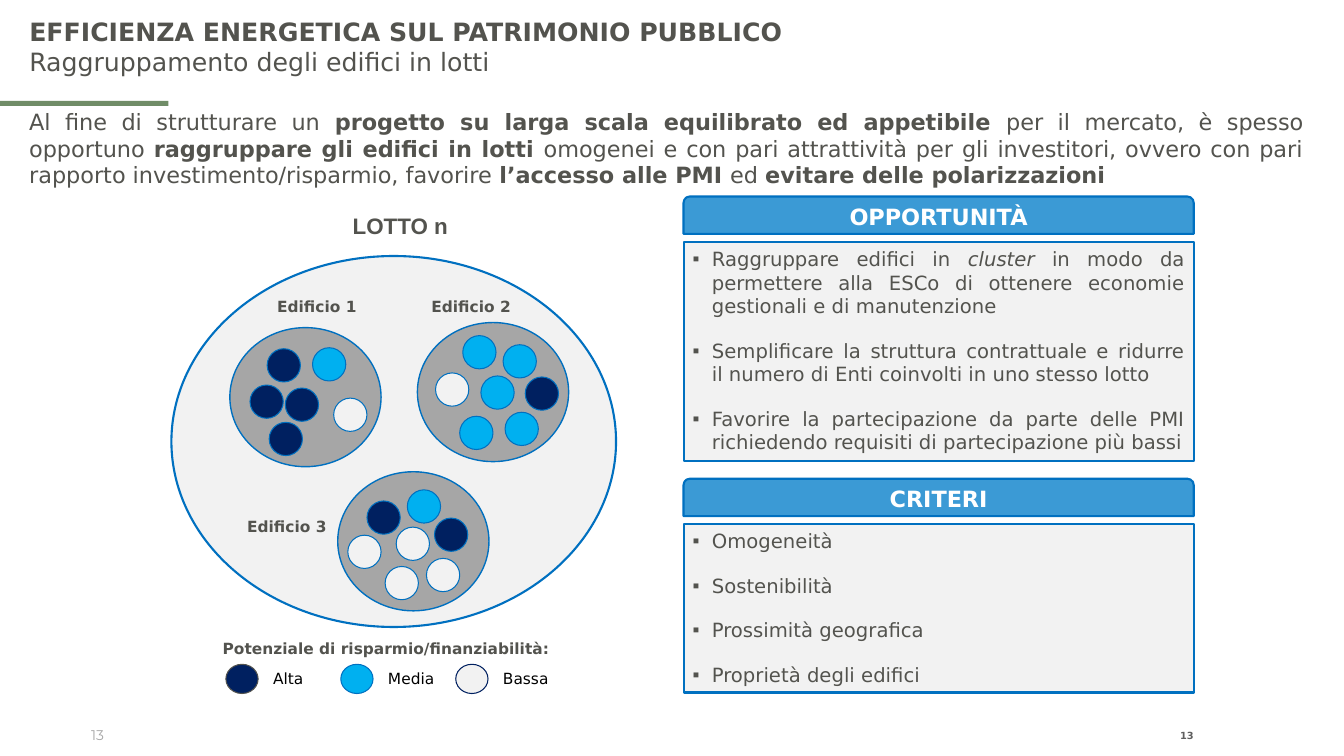
import pptx
import pptx.util
import pptx.dml.color
import pptx.enum.shapes
import pptx.enum.text
import lxml.etree

Inches, Pt = pptx.util.Inches, pptx.util.Pt
KIND = pptx.enum.shapes.MSO_SHAPE
ALIGN = pptx.enum.text.PP_ALIGN
ANCHOR = pptx.enum.text.MSO_ANCHOR
FIT = pptx.enum.text.MSO_AUTO_SIZE

# Content: a run is (text, style), where style is "", "b" or "i"
COLORS = {
    "text": "53534E", "black": "000000", "white": "FFFFFF", "bar": "708C67",
    "line": "0070C0", "pale": "F2F2F2", "grey": "A6A6A6", "page": "5F5F5F",
    "head": "3B9AD5", "high": "002060", "mid": "00B0F0",
}
SANS = "DejaVu Sans"
TITLE = [
    [("EFFICIENZA ENERGETICA SUL PATRIMONIO PUBBLICO", "b")],
    [("Raggruppamento degli edifici in lotti", "")],
]
INTRO = [[
    ("Al fine di strutturare un ", ""),
    ("progetto su larga scala equilibrato ed appetibile ", "b"),
    ("per il mercato, è spesso opportuno ", ""),
    ("raggruppare gli edifici in lotti ", "b"),
    ("omogenei e con pari attrattività per gli investitori, ovvero con pari "
     "rapporto investimento/risparmio, favorire ", ""),
    ("l’accesso alle PMI ", "b"),
    ("ed ", ""),
    ("evitare delle polarizzazioni", "b"),
]]
# Panels: heading, top, list height, alignment, items
PANELS = [
    ("OPPORTUNITÀ", 1.95, 2.17, ALIGN.JUSTIFY, [
        [("Raggruppare edifici in ", ""), ("cluster ", "i"),
         ("in modo da permettere alla ESCo di ottenere economie gestionali "
          "e di manutenzione", "")],
        [("Semplificare la struttura contrattuale e ridurre il numero di "
          "Enti coinvolti in uno stesso lotto", "")],
        [("Favorire la partecipazione da parte delle PMI richiedendo "
          "requisiti di partecipazione più bassi", "")],
    ]),
    ("CRITERI", 4.75, 1.67, ALIGN.LEFT, [
        [("Omogeneità", "")],
        [("Sostenibilità", "")],
        [("Prossimità geografica", "")],
        [("Proprietà degli edifici", "")],
    ]),
]
# Buildings: name, label box, label alignment, corner, dots by rating
HOUSES = [
    ("Edificio 1", (2.65, 2.9, 1.05, 0.29), ALIGN.LEFT, (2.28, 3.25), {
        "high": [(2.65, 3.46), (2.83, 3.85), (2.48, 3.82), (2.67, 4.19)],
        "mid": [(3.1, 3.45)],
        "pale": [(3.31, 3.95)]}),
    ("Edificio 2", (4.18, 2.9, 1.05, 0.29), ALIGN.LEFT, (4.14, 3.2), {
        "high": [(5.21, 3.74)],
        "mid": [(5.01, 4.09), (4.99, 3.42), (4.59, 3.33), (4.77, 3.73),
                (4.56, 4.13)],
        "pale": [(4.32, 3.7)]}),
    ("Edificio 3", (2.28, 5.08, 1.06, 0.29), ALIGN.RIGHT, (3.35, 4.68), {
        "high": [(3.64, 4.97), (4.31, 5.14)],
        "mid": [(4.04, 4.86)],
        "pale": [(3.45, 5.31), (4.23, 5.54), (3.93, 5.23), (3.82, 5.62)]}),
]
KEYS = [("Alta", "high", "text"), ("Media", "mid", "line"),
        ("Bassa", "pale", "high")]


def rgb(name):
    return pptx.dml.color.RGBColor.from_string(COLORS[name])


def place(shape, box):
    shape.left, shape.top, shape.width, shape.height = map(Inches, box)


def paint(shape, fill, line=None, width=0.75):
    shape.fill.solid()
    shape.fill.fore_color.rgb = rgb(fill)
    if line:
        shape.line.color.rgb = rgb(line)
        shape.line.width = Pt(width)
    else:
        shape.line.fill.background()


def draw(home, kind, box, fill, line=None, width=0.75):
    shape = home.add_shape(kind, *map(Inches, box))
    shape.shadow.inherit = False
    paint(shape, fill, line, width)
    return shape


def write(shape, paras, size, color="text", font=SANS, align=ALIGN.LEFT,
          anchor=ANCHOR.TOP, inset=(0.1, 0.05), bullet=None):
    frame = shape.text_frame
    frame.word_wrap = True
    frame.auto_size = FIT.NONE
    frame.vertical_anchor = anchor
    frame.margin_left = frame.margin_right = Inches(inset[0])
    frame.margin_top = frame.margin_bottom = Inches(inset[1])
    for i, runs in enumerate(paras):
        para = frame.add_paragraph() if i else frame.paragraphs[0]
        if bullet:
            props = para._p.get_or_add_pPr()
            props.set("marL", str(Inches(0.19)))
            props.set("indent", str(-Inches(0.19)))
            mark = lxml.etree.SubElement(
                props, pptx.oxml.ns.qn("a:buChar"))
            mark.set("char", bullet)
        para.alignment = align
        para.space_before = Pt(3 if bullet and i else 0)
        para.space_after = Pt(12 if bullet else 0)
        for words, style in runs:
            run = para.add_run()
            run.text = words
            run.font.name = font
            run.font.size = Pt(size)
            run.font.bold = style == "b"
            run.font.italic = style == "i"
            run.font.color.rgb = rgb(color)


def label(home, box, words, size, style="b", **look):
    shape = home.add_textbox(*map(Inches, box))
    write(shape, [[(words, style)]], size, **look)


def main():
    deck = pptx.Presentation()
    deck.slide_width, deck.slide_height = Inches(13.33), Inches(7.5)
    slide = deck.slides.add_slide(deck.slide_layouts[3])
    shapes = slide.shapes

    # Title, accent bar and introduction
    place(shapes.title, (0.29, 0.16, 9.81, 0.6))
    write(shapes.title, TITLE, 18, inset=(0, 0))
    draw(shapes, KIND.RECTANGLE, (0, 1, 1.67, 0.05), "bar")
    intro = shapes.add_textbox(*map(Inches, (0.29, 1.07, 12.64, 0.81)))
    write(intro, INTRO, 16, align=ALIGN.JUSTIFY, inset=(0, 0))

    # Lot with its buildings
    label(shapes, (1.57, 2.06, 4.8, 0.37), "LOTTO n", 16, font="Arial",
          align=ALIGN.CENTER)
    draw(shapes, KIND.OVAL, (1.7, 2.54, 4.41, 3.68), "pale", "line", 1.5)
    for name, box, align, corner, dots in HOUSES:
        group = shapes.add_group_shape().shapes
        draw(group, KIND.OVAL, (*corner, 1.5, 1.38), "grey", "line", 1)
        for fill, spots in dots.items():
            for spot in spots:
                draw(group, KIND.OVAL, (*spot, 0.33, 0.33), fill, "line")
        label(shapes, box, name, 11, align=align)

    # Legend
    label(shapes, (2.11, 6.29, 3.86, 0.29),
          "Potenziale di risparmio/finanziabilità:", 11)
    for i, (name, fill, line) in enumerate(KEYS):
        left = 2.24 + 1.14 * i
        draw(shapes, KIND.OVAL, (left, 6.59, 0.32, 0.29), fill, line)
        label(shapes, (left + 0.37, 6.59, 0.73, 0.29), name, 11, "",
              color="black")

    # Panels with heading and list; the narrow inset keeps lines unbroken
    for i, (name, top, high, align, items) in enumerate(PANELS):
        body = slide.placeholders[i + 1]
        place(body, (6.78, top + 0.45, 5.06, high))
        paint(body, "pale", "line", 1.5)
        write(body, items, 14, align=align, inset=(0.09, 0.05), bullet="▪")
        head = draw(shapes, KIND.ROUND_2_SAME_RECTANGLE,
                    (6.78, top, 5.06, 0.37), "head", "line", 1.5)
        write(head, [[(name, "b")]], 16, "white", align=ALIGN.CENTER,
              anchor=ANCHOR.MIDDLE, inset=(0.2, 0.05))

    # Page numbers
    label(shapes, (0.65, 7.16, 0.48, 0.27), "13", 10, "", color="grey",
          font="Montserrat", align=ALIGN.RIGHT, anchor=ANCHOR.MIDDLE)
    label(shapes, (11.37, 7.24, 0.47, 0.12), "13", 7, color="page",
          align=ALIGN.RIGHT, anchor=ANCHOR.MIDDLE, inset=(0, 0))

    deck.save("out.pptx")


if __name__ == "__main__":
    main()
